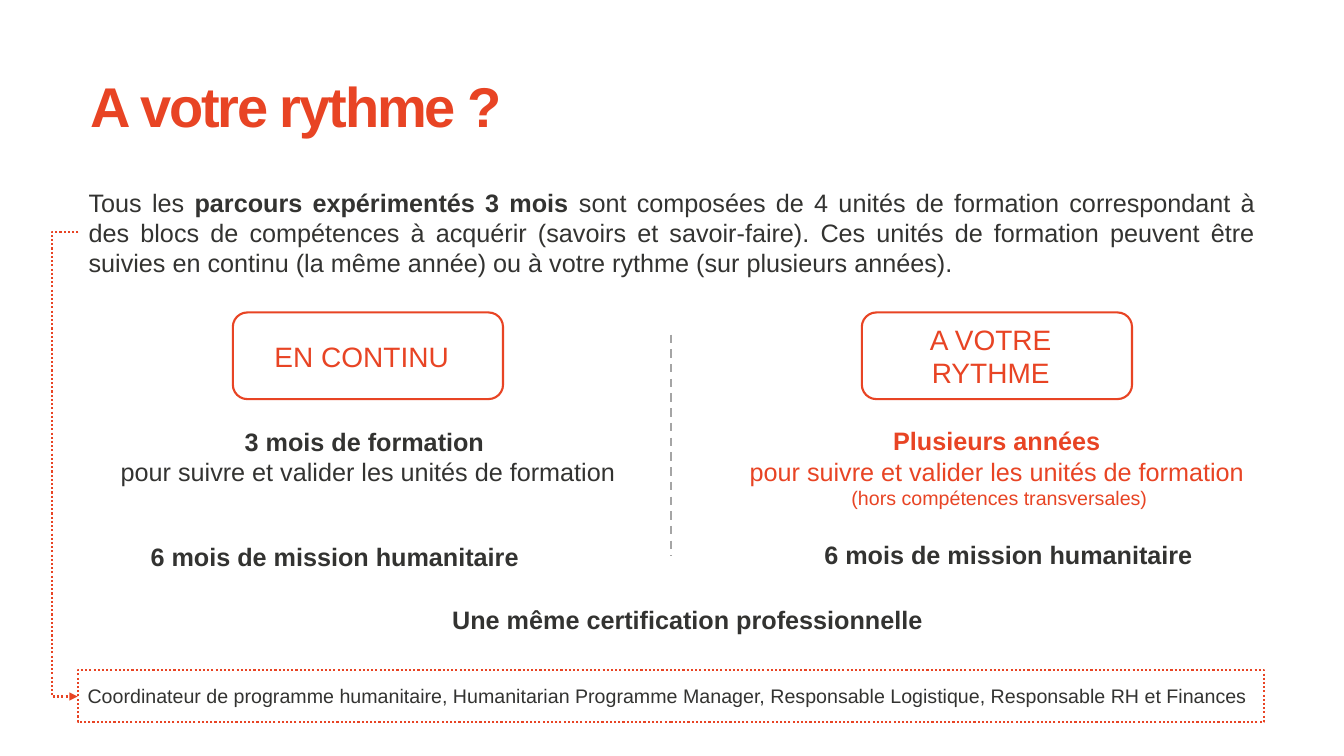
"""Builds the slide comparing the continuous and self-paced training paths."""
from lxml import etree
from pptx import Presentation
from pptx.dml.color import RGBColor
from pptx.enum.dml import MSO_LINE
from pptx.enum.shapes import MSO_CONNECTOR, MSO_SHAPE
from pptx.enum.text import MSO_ANCHOR, PP_ALIGN
from pptx.oxml.ns import qn
from pptx.util import Pt

RECT, ROUND = MSO_SHAPE.RECTANGLE, MSO_SHAPE.ROUNDED_RECTANGLE
LEFT, MID, FULL = PP_ALIGN.LEFT, PP_ALIGN.CENTER, PP_ALIGN.JUSTIFY
TOP, CENTER = MSO_ANCHOR.TOP, MSO_ANCHOR.MIDDLE
DASH, DOT = MSO_LINE.DASH, MSO_LINE.ROUND_DOT

THEME = {
    "font": "Arial", "ink": "333331", "red": "E84424", "gray": "A5A5A5",
    "white": "FFFFFF", "title": 40, "tag": 20, "body": 18, "note": 14, "line": 1.5,
}

TITLE = "A votre rythme ?"
INTRO = [
    ("Tous les ", "body", False),
    ("parcours expérimentés 3 mois ", "body", True),
    ("sont composées de 4 unités de formation correspondant à des blocs de "
     "compétences à acquérir (savoirs et savoir-faire). Ces unités de formation "
     "peuvent être suivies en continu (la même année) ou à votre rythme "
     "(sur plusieurs années).", "body", False),
]
UNITS = "pour suivre et valider les unités de formation"
STEADY = [("3 mois de formation \v", "body", True), (UNITS, "body", False)]
PACED = [
    ("Plusieurs années\v", "body", True),
    (UNITS + "\v", "body", False),
    (" (hors compétences transversales)", "note", False),
]
MISSION = [("6 mois de mission humanitaire", "body", True)]
AWARD = [("Une même certification professionnelle", "body", True)]
JOBS = [("Coordinateur de programme humanitaire, Humanitarian Programme Manager, "
         "Responsable Logistique, Responsable RH et Finances", "note", False)]

BLOCKS = [
    (STEADY, (78.5, 293.8, 368.6, 64), MID, "ink"),
    (INTRO, (56.2, 133.9, 847.4, 64), FULL, "ink"),
    (MISSION, (45.4, 379.4, 387.4, 36.7), MID, "ink"),
    (MISSION, (540.7, 379.4, 359.3, 33.8), MID, "ink"),
    (AWARD, (78.5, 410.4, 825.1, 64), MID, "ink"),
    (PACED, (519.8, 296.6, 384.5, 74.9), MID, "red"),
]
TAGS = [(["EN CONTINU"], 166.3), (["A VOTRE", "RYTHME"], 615.6)]
TAG_TOP, TAG_W, TAG_H, TAG_PAD = 223.2, 193, 61.9, 16
FOOT = (55.5, 478.8, 847.4, 36.7)
SPLIT = (479.5, 239, 479.5, 397.4)
LINK = (56, 165.6, 55.5, 497.5)
BEND = 37.5


def color(key):
    return RGBColor.from_string(THEME[key])


def style(para, key, size, align, bold=None):
    para.alignment = align
    font = para.font
    font.name, font.size, font.bold = THEME["font"], Pt(THEME[size]), bold
    font.color.rgb = color(key)


def stroke(line, key, dash=None):
    line.color.rgb = color(key)
    line.width = Pt(THEME["line"])
    if dash:
        line.dash_style = dash


def shape(slide, kind, box, fill=None):
    item = slide.shapes.add_shape(kind, *map(Pt, box))
    item.shadow.inherit = False
    if fill:
        item.fill.solid()
        item.fill.fore_color.rgb = color(fill)
    else:
        item.fill.background()
    item.line.fill.background()
    return item


def block(slide, runs, box, align, key):
    item = shape(slide, RECT, box, "white")
    frame = item.text_frame
    frame.word_wrap, frame.vertical_anchor = True, CENTER
    para = frame.paragraphs[0]
    style(para, key, "body", align)
    for text, size, bold in runs:
        *heads, last = text.split("\v")
        for part in heads + [last]:
            if part:
                run = para.add_run()
                run.text = part
                run.font.size, run.font.bold = Pt(THEME[size]), bold
        if heads:
            para.add_line_break()
    return item


def label(slide, lines, box, align, size, anchor, bold=None):
    frame = slide.shapes.add_textbox(*map(Pt, box)).text_frame
    frame.word_wrap, frame.vertical_anchor = True, anchor
    frame.text = "\n".join(lines)
    for para in frame.paragraphs:
        style(para, "red", size, align, bold)
    return frame


def wire(slide, kind, ends, key, dash):
    item = slide.shapes.add_connector(kind, *map(Pt, ends))
    stroke(item.line, key, dash)
    etree.SubElement(item._element.spPr, qn("a:effectLst"))
    return item


def tag(slide, lines, left):
    card = shape(slide, ROUND, (left, TAG_TOP, TAG_W, TAG_H))
    stroke(card.line, "red")
    high = 24 * len(lines) + 7.2
    top = TAG_TOP + (TAG_H - high) / 2
    frame = label(slide, lines, (left, top, TAG_W, high), MID, "tag", CENTER)
    frame.margin_right = Pt(TAG_PAD)


def link(slide):
    item = wire(slide, MSO_CONNECTOR.ELBOW, LINK, "red", DOT)
    props = item._element.spPr
    ratio = (LINK[0] - BEND) / (LINK[0] - LINK[2])
    etree.SubElement(props.find(".//" + qn("a:avLst")), qn("a:gd"),
                     name="adj1", fmla=f"val {round(ratio * 100000)}")
    etree.SubElement(props.find(qn("a:ln")), qn("a:tailEnd"), type="triangle")


def main():
    deck = Presentation()
    deck.slide_width, deck.slide_height = Pt(960), Pt(540)
    slide = deck.slides.add_slide(deck.slide_layouts[6])
    for args in BLOCKS:
        block(slide, *args)
    wire(slide, MSO_CONNECTOR.STRAIGHT, SPLIT, "gray", DASH)
    head = label(slide, [TITLE], (57.6, 53.3, 465.1, 63.4), LEFT, "title", TOP, True)
    para = head.paragraphs[0]
    para.line_spacing = 0.9
    para.runs[0].font._element.set("spc", "-150")
    for lines, left in TAGS:
        tag(slide, lines, left)
    foot = block(slide, JOBS, FOOT, FULL, "ink")
    stroke(foot.line, "red", DOT)
    link(slide)
    deck.save("out.pptx")


if __name__ == "__main__":
    main()
